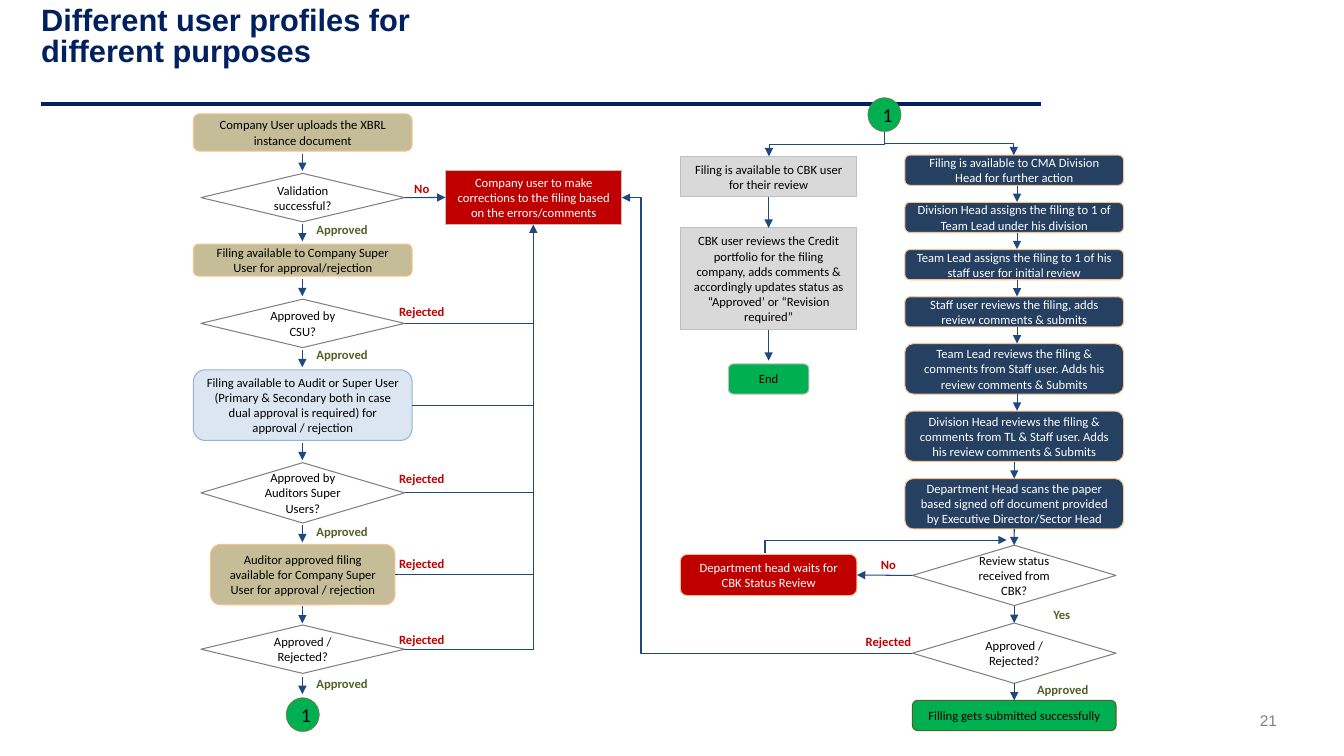
"""Build the slide that charts the filing review workflow of each user profile."""
from pptx import Presentation
from pptx.dml.color import RGBColor
from pptx.enum.shapes import MSO_CONNECTOR, MSO_SHAPE
from pptx.enum.text import MSO_ANCHOR, PP_ALIGN
from pptx.oxml.ns import qn
from pptx.util import Cm, Pt
from lxml.etree import SubElement

COLORS = {
    "navy": "002060", "tan": "C4BD97", "peach": "FAC090", "white": "FFFFFF", "gray": "808080",
    "ice": "DCE6F2", "sky": "95B3D7", "red": "C00000", "silver": "BFBFBF", "steel": "254061",
    "green": "00B050", "olive": "4F6228", "mist": "D9D9D9", "arrow": "1F497D", "rust": "C0504D",
    "black": "000000",
}
STYLES = {
    "company": (MSO_SHAPE.ROUNDED_RECTANGLE, "tan", "peach", "black"),
    "audit": (MSO_SHAPE.ROUNDED_RECTANGLE, "ice", "sky", "black"),
    "decision": (MSO_SHAPE.DIAMOND, "white", "gray", "black"),
    "correction": (MSO_SHAPE.RECTANGLE, "red", "silver", "white"),
    "division": (MSO_SHAPE.ROUNDED_RECTANGLE, "steel", "peach", "white"),
    "bank": (MSO_SHAPE.RECTANGLE, "mist", "silver", "black"),
    "wait": (MSO_SHAPE.ROUNDED_RECTANGLE, "red", "peach", "white"),
    "end": (MSO_SHAPE.ROUNDED_RECTANGLE, "green", "silver", "black"),
    "submitted": (MSO_SHAPE.ROUNDED_RECTANGLE, "green", "olive", "black"),
    "link": (MSO_SHAPE.OVAL, "green", "rust", "black"),
}
TOP, LEFT, BOTTOM, RIGHT = range(4)


def rgb(name):
    return RGBColor.from_string(COLORS[name])


def apply(target, values):
    for name, value in values.items():
        setattr(target, name, value)


class FlowSlide:
    """Hold the text style and the slide being drawn."""

    def __init__(self, slide, font="Calibri", size=9):
        self.shapes = slide.shapes
        self.font = font
        self.size = size

    def fill_text(self, frame, text, color, align=PP_ALIGN.CENTER, frame_format=None, **font):
        apply(frame, {"word_wrap": True, "vertical_anchor": MSO_ANCHOR.MIDDLE, **(frame_format or {})})
        frame.text = text
        paragraph = frame.paragraphs[0]
        paragraph.alignment = align
        apply(paragraph.font, {"name": self.font, "size": Pt(self.size), **font})
        paragraph.font.color.rgb = rgb(color)
        return paragraph

    def step(self, style, center, top, width, height, text, size=9, border=0.75):
        preset, fill, line, color = STYLES[style]
        shape = self.shapes.add_shape(preset, Cm(center - width / 2), Cm(top), Cm(width), Cm(height))
        shape.shadow.inherit = False
        shape.fill.solid()
        shape.fill.fore_color.rgb = rgb(fill)
        shape.line.color.rgb = rgb(line)
        shape.line.width = Pt(border)
        self.fill_text(shape.text_frame, text, color, size=Pt(size))
        return shape

    def text(self, left, top, width, height, text, color, **style):
        box = self.shapes.add_textbox(Cm(left), Cm(top), Cm(width), Cm(height))
        return self.fill_text(box.text_frame, text, color, **style)

    def label(self, center, top, text, color, width=2.21):
        self.text(center - width / 2, top, width, 0.81, text, color, bold=True)

    def line(self, start, end, arrow=True, color="arrow", width=0.75, kind=MSO_CONNECTOR.STRAIGHT):
        connector = self.shapes.add_connector(kind, *map(Cm, (*start, *end)))
        connector.line.color.rgb = rgb(color)
        connector.line.width = Pt(width)
        properties = connector._element.spPr
        if arrow:
            SubElement(properties.find(qn("a:ln")), qn("a:tailEnd"), type="triangle")
        SubElement(properties, qn("a:effectLst"))
        return connector

    def join(self, source, source_side, target, target_side):
        connector = self.line((0, 0), (1, 1))
        connector.begin_connect(source, source_side)
        connector.end_connect(target, target_side)

    def branch(self, source, end_x, end_y=None, side=RIGHT, arrow=False):
        middle = (source.top + source.height / 2) / Cm(1)
        connector = self.line((0, 0), (end_x, end_y or middle), arrow)
        connector.begin_connect(source, side)

    def chain(self, steps, x, length):
        for upper, lower in zip(steps, steps[1:]):
            middle = (upper.top + upper.height + lower.top) / 2 / Cm(1)
            self.line((x, middle - length / 2), (x, middle + length / 2))

    def elbow(self, start, end, preset, turns=0, bend=None):
        center_x, center_y = (start[0] + end[0]) / 2, (start[1] + end[1]) / 2
        dx, dy = end[0] - center_x, end[1] - center_y
        for turn in range(turns):
            dx, dy = dy, -dx
        connector = self.line((center_x - dx, center_y - dy), (center_x + dx, center_y + dy),
                              kind=MSO_CONNECTOR.ELBOW)
        properties = connector._element.spPr
        properties.find(qn("a:xfrm")).set("rot", str(turns * 5400000))
        geometry = properties.find(qn("a:prstGeom"))
        geometry.set("prst", preset)
        if bend:
            SubElement(geometry.find(qn("a:avLst")), qn("a:gd"), name="adj1", fmla=f"val {bend}")


def main():
    presentation = Presentation()
    apply(presentation, {"slide_width": Cm(33.87), "slide_height": Cm(19.05)})
    flow = FlowSlide(presentation.slides.add_slide(presentation.slide_layouts[6]))

    flush = {"margin_left": 0, "margin_right": 0, "margin_top": 0, "margin_bottom": 0,
             "vertical_anchor": MSO_ANCHOR.TOP}
    flow.text(29.51, 17.93, 2.67, 0.56, "21", "gray", align=PP_ALIGN.RIGHT, frame_format=flush,
              name="Arial", size=Pt(11))
    flow.line((1.04, 2.62), (26.24, 2.62), arrow=False, color="navy", width=3)
    title = flow.text(1.04, 0.05, 25.2, 2.24, "Different user profiles for\vdifferent purposes", "navy",
                      align=PP_ALIGN.LEFT, frame_format={**flush, "margin_top": Cm(0.1)},
                      name="Arial", size=Pt(22), bold=True)
    title.line_spacing = 0.85

    company_steps = [flow.step(style, 7.63, *place) for style, *place in (
        ("company", 2.87, 5.51, 0.94, "Company User uploads the XBRL instance document"),
        ("decision", 4.37, 5.13, 1.22, "Validation successful?"),
        ("company", 6.15, 5.51, 0.81, "Filing available to Company Super User for approval/rejection"),
        ("decision", 7.54, 5.13, 1.22, "Approved by CSU?"),
        ("audit", 9.32, 5.51, 1.78, "Filing available to Audit or Super User (Primary & Secondary both in "
                                    "case dual approval is required) for approval / rejection"),
        ("decision", 11.66, 5.13, 1.52, "Approved by Auditors Super Users?"),
        ("company", 13.72, 4.65, 1.52, "Auditor approved filing available for Company Super User for "
                                       "approval / rejection"),
        ("decision", 15.75, 5.13, 1.22, "Approved / Rejected?"),
        ("link", 17.58, 0.84, 0.86, "1", 14, 0.25),
    )]
    corrections = flow.step("correction", 13.45, 4.29, 4.45, 1.37,
                            "Company user to make corrections to the filing based on the errors/comments")

    division_texts = (
        "Filing is available to CMA Division Head for further action",
        "Division Head assigns the filing to 1 of Team Lead under his division",
        "Team Lead assigns the filing to 1 of his staff user for initial review",
        "Staff user reviews the filing, adds review comments & submits",
    )
    review_texts = (
        "Team Lead reviews the filing & comments from Staff user. Adds his review comments & Submits",
        "Division Head reviews the filing & comments from TL & Staff user. Adds his review comments & Submits",
        "Department Head scans the paper based signed off document provided by Executive Director/Sector Head",
    )
    division_steps = [flow.step("division", 25.56, 3.91 + 1.19 * row, 5.51, 0.76, text)
                      for row, text in enumerate(division_texts)]
    division_steps += [flow.step("division", 25.56, 8.66 + 1.7 * row, 5.51, 1.27, text)
                       for row, text in enumerate(review_texts)]
    status = flow.step("decision", 25.56, 13.74, 5.13, 1.52, "Review status received from CBK?")
    verdict = flow.step("decision", 25.56, 15.7, 5.13, 1.52, "Approved / Rejected?")
    submitted = flow.step("submitted", 25.56, 17.65, 5.13, 0.76, "Filling gets submitted successfully")

    bank_filing = flow.step("bank", 19.37, 3.94, 4.45, 1.02, "Filing is available to CBK user for their review")
    bank_review = flow.step("bank", 19.37, 5.74, 4.45, 2.57,
                            "CBK user reviews the Credit portfolio for the filing company, adds comments & "
                            "accordingly updates status as “Approved’ or “Revision required”")
    flow.step("end", 19.37, 9.17, 2.03, 0.76, "End")
    waiting = flow.step("wait", 19.37, 13.97, 4.45, 1.04, "Department head waits for CBK Status Review")
    flow.step("link", 22.29, 2.46, 0.84, 0.86, "1", 14, 0.25)

    flow.chain(company_steps, 7.62, 0.43)
    flow.chain(division_steps[:6], 25.63, 0.41)
    final_steps = [*division_steps[5:], status, verdict, submitted]
    for upper, lower in zip(final_steps, final_steps[1:]):
        flow.join(upper, BOTTOM, lower, TOP)
    flow.join(company_steps[1], RIGHT, corrections, LEFT)
    flow.join(status, LEFT, waiting, RIGHT)
    flow.join(bank_filing, BOTTOM, bank_review, TOP)
    flow.branch(bank_review, 19.37, 9.09, side=BOTTOM, arrow=True)
    for rejecting in company_steps[3:7]:
        flow.branch(rejecting, 13.44)

    flow.elbow((10.19, 16.36), (13.44, 5.66), "bentConnector2")
    flow.elbow((22.99, 16.46), (15.67, 4.98), "bentConnector3", turns=2, bend=93400)
    flow.elbow((19.28, 13.94), (25.37, 13.61), "bentConnector2", turns=1)
    flow.elbow((22.28, 3.33), (19.38, 3.94), "bentConnector3", turns=1)
    flow.elbow((22.28, 3.33), (25.55, 3.91), "bentConnector3", turns=3)

    for top in (7.44, 11.66, 13.79, 15.7):
        flow.label(10.63, top, "Rejected", "red")
    for top in (5.38, 8.53, 12.98, 16.81):
        flow.label(8.62, top, "Approved", "olive")
    flow.label(26.78, 16.97, "Approved", "olive")
    flow.label(22.39, 15.77, "Rejected", "red")
    flow.label(10.63, 4.34, "No", "red", 1.3)
    flow.label(22.39, 13.82, "No", "red", 1.3)
    flow.label(26.76, 15.09, "Yes", "olive", 1.3)

    presentation.save("out.pptx")


if __name__ == "__main__":
    main()
